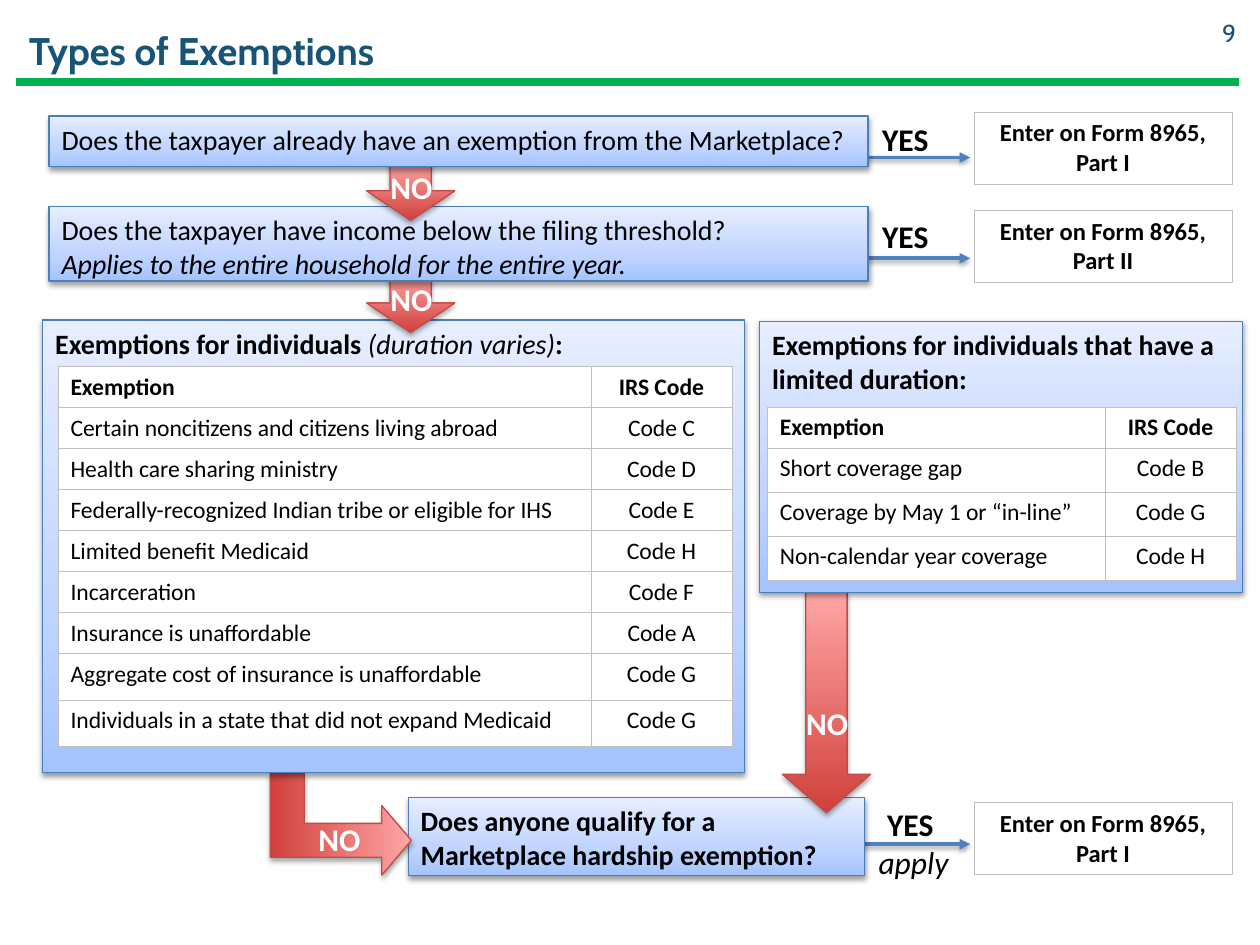
from lxml.etree import SubElement
from pptx import Presentation
from pptx.dml.color import RGBColor
from pptx.enum.shapes import MSO_CONNECTOR, MSO_SHAPE
from pptx.enum.text import MSO_ANCHOR, PP_ALIGN
from pptx.oxml import parse_xml
from pptx.oxml.ns import nsdecls, qn
from pptx.util import Inches, Pt

BLUE = [(0, "A4C4FF"), (35, "BFD4FF"), (100, "E6EEFF")], "4B7EBC"
RED = [(0, "D1403C"), (100, "FFA6A5")], "BF4C48"
NAVY = "175475"


def color(code):
    return RGBColor.from_string(code)


def place(*nums):
    return [Inches(n) for n in nums]


def shade(shape, alpha=None, dist=1.6):
    """Replace the theme shadow with a soft one, or with none."""
    inner = ""
    if alpha:
        inner = (f'<a:outerShdw blurRad="{Pt(3.1)}" dist="{Pt(dist)}" dir="5400000" '
                 f'rotWithShape="0"><a:srgbClr val="000000"><a:alpha val="{alpha * 1000}"/>'
                 '</a:srgbClr></a:outerShdw>')
    shape._element.spPr.append(
        parse_xml(f'<a:effectLst {nsdecls("a")}>{inner}</a:effectLst>'))


def blend(shape, stops):
    """Fill with a gradient that rises from the bottom edge."""
    marks = "".join(f'<a:gs pos="{pos * 1000}"><a:srgbClr val="{code}"/></a:gs>'
                    for pos, code in stops)
    grad = parse_xml(f'<a:gradFill {nsdecls("a")} rotWithShape="1"><a:gsLst>{marks}'
                     '</a:gsLst><a:lin ang="16200000" scaled="0"/></a:gradFill>')
    shape._element.spPr.find(qn("a:prstGeom")).addnext(grad)


class Deck:
    font = "Calibri"
    ink = "000000"

    def __init__(self, slide):
        self.slide = slide
        self.shapes = slide.shapes

    def style(self, run, size, bold=False, italic=False, ink=None, font=None):
        run.font.size = Pt(size)
        run.font.name = font or self.font
        run.font.bold = bold
        run.font.italic = italic
        run.font.color.rgb = color(ink or self.ink)

    def title(self, text, spot):
        box = self.shapes.title
        box.left, box.top, box.width, box.height = place(*spot)
        frame = box.text_frame
        frame.text = text
        frame.vertical_anchor = MSO_ANCHOR.MIDDLE
        frame.paragraphs[0].alignment = PP_ALIGN.LEFT
        self.style(frame.paragraphs[0].runs[0], 22, True, ink=NAVY, font="Cabin")

    def label(self, text, spot, align=PP_ALIGN.CENTER, size=18, **look):
        frame = self.shapes.add_textbox(*place(*spot)).text_frame
        frame.word_wrap = True
        frame.margin_left = frame.margin_right = 0
        frame.vertical_anchor = MSO_ANCHOR.MIDDLE
        frame.text = text
        frame.paragraphs[0].alignment = align
        self.style(frame.paragraphs[0].runs[0], size, **look)

    def line(self, start, end, code, width, arrow=True):
        link = self.shapes.add_connector(
            MSO_CONNECTOR.STRAIGHT, *place(*start), *place(*end))
        link.line.color.rgb = color(code)
        link.line.width = Pt(width)
        if arrow:
            SubElement(link.line._get_or_add_ln(), qn("a:tailEnd"), type="triangle")
        shade(link, 38 if arrow else None)

    def shape(self, kind, spot, look, alpha, dist):
        item = self.shapes.add_shape(kind, *place(*spot))
        stops, edge = look
        blend(item, stops)
        item.line.color.rgb = color(edge)
        item.line.width = Pt(0.75)
        shade(item, alpha, dist)
        return item

    def box(self, spot, *rows):
        """Each row is a list of (text, bold, italic) parts."""
        frame = self.shape(MSO_SHAPE.RECTANGLE, spot, BLUE, 38, 1.6).text_frame
        frame.word_wrap = True
        frame.vertical_anchor = MSO_ANCHOR.TOP
        for i, row in enumerate(rows):
            para = frame.add_paragraph() if i else frame.paragraphs[0]
            para.alignment = PP_ALIGN.LEFT
            for text, bold, italic in row:
                run = para.add_run()
                run.text = text
                self.style(run, 16, bold, italic)

    def arrow(self, kind, spot, adjust, note, turn=0):
        item = self.shape(kind, spot, RED, 35, 1.8)
        for i, value in enumerate(adjust):
            item.adjustments[i] = value
        item.rotation = turn
        self.label("NO", note, bold=True, ink="FFFFFF")

    def table(self, spot, widths, heights, rows, size=13.5):
        grid = self.shapes.add_table(len(rows), len(widths), *place(*spot)).table
        for col, width in zip(grid.columns, widths):
            col.width = Inches(width)
        for row, height in zip(grid.rows, heights):
            row.height = Inches(height)
        for r, row in enumerate(rows):
            for c, text in enumerate(row):
                self.cell(grid.cell(r, c), text, size, r == 0,
                          c == len(widths) - 1)

    def cell(self, cell, text, size, head, center):
        cell.text = text
        cell.vertical_anchor = MSO_ANCHOR.MIDDLE if head else MSO_ANCHOR.TOP
        para = cell.text_frame.paragraphs[0]
        para.alignment = PP_ALIGN.CENTER if center else PP_ALIGN.LEFT
        self.style(para.runs[0], size, head)
        props = cell._tc.get_or_add_tcPr()
        for side in ("lnL", "lnR", "lnT", "lnB"):
            edge = SubElement(props, qn(f"a:{side}"), w=str(Pt(0.5)))
            SubElement(SubElement(edge, qn("a:solidFill")), qn("a:srgbClr"), val="BFBFBF")
        cell.fill.solid()
        cell.fill.fore_color.rgb = color("FFFFFF")


def main():
    prs = Presentation()
    prs.slide_width, prs.slide_height = place(10, 7.5)
    deck = Deck(prs.slides.add_slide(prs.slide_layouts[5]))

    # Header
    deck.line((0.13, 0.65), (9.83, 0.65), "00B050", 4.75, arrow=False)
    deck.title("Types of Exemptions", (0.13, 0.11, 9, 0.57))
    deck.label("9", (9.4, 0.06, 0.41, 0.4), PP_ALIGN.RIGHT, 14, ink=NAVY, font="Cabin")

    # Arrows to the forms
    for y in (1.25, 2.05, 6.7):
        deck.line((6.5, y), (7.7, y), "4F81BD", 2)

    # Hardship question
    deck.box((3.24, 6.33, 3.62, 0.62),
             [("Does anyone qualify for a Marketplace hardship exemption?", True, False)])
    deck.arrow(MSO_SHAPE.BENT_UP_ARROW, (2.3, 5.98, 0.81, 1.12), (0.333, 0.34, 0.29),
               (2.41, 6.48, 0.57, 0.35), turn=90)

    # Questions and panels, each drawn over the arrow that leaves it
    down = MSO_SHAPE.DOWN_ARROW
    deck.box((0.34, 2.54, 5.57, 3.59),
             [("Exemptions for individuals ", True, False),
              ("(duration varies)", False, True), (":", True, False)])
    deck.arrow(down, (2.91, 2.17, 0.7, 0.47), (0.468, 0.5), (2.98, 2.2, 0.57, 0.35))
    deck.box((0.39, 1.64, 6.5, 0.59),
             [("Does the taxpayer have income below the filing threshold?", False, False)],
             [("Applies to the entire household for the entire year.", False, True)])
    deck.arrow(down, (2.91, 1.28, 0.7, 0.47), (0.468, 0.5), (2.98, 1.31, 0.57, 0.35))
    deck.box((0.39, 0.92, 6.5, 0.4),
             [("Does the taxpayer already have an exemption from the Marketplace?",
               False, False)])
    deck.arrow(down, (6.21, 4.7, 0.7, 1.75), (0.468, 0.435), (6.28, 5.47, 0.57, 0.53))
    deck.box((6.03, 2.55, 3.83, 2.15),
             [("Exemptions for individuals that have a limited duration:", True, False)])

    # Exemption tables
    head = ("Exemption", "IRS Code")
    deck.table((0.46, 2.91, 5.35, 3.01), (4.23, 1.12), [0.32] * 7 + [0.37] * 2, [
        head,
        ("Certain noncitizens and citizens living abroad", "Code C"),
        ("Health care sharing ministry", "Code D"),
        ("Federally-recognized Indian tribe or eligible for IHS", "Code E"),
        ("Limited benefit Medicaid", "Code H"),
        ("Incarceration", "Code F"),
        ("Insurance is unaffordable", "Code A"),
        ("Aggregate cost of insurance is unaffordable", "Code G"),
        ("Individuals in a state that did not expand Medicaid", "Code G")])
    deck.table((6.09, 3.23, 3.72, 1.38), (2.68, 1.04), [0.28] + [0.35] * 3, [
        head,
        ("Short coverage gap", "Code B"),
        ("Coverage by May 1 or “in-line”", "Code G"),
        ("Non-calendar year coverage", "Code H")])

    # Answers and forms
    for x, y, top, part in ((6.9, 0.93, 0.89, "I"), (6.9, 1.7, 1.67, "II"),
                            (6.94, 6.36, 6.37, "I")):
        deck.label("YES", (x, y, 0.57, 0.35), bold=True)
        deck.table((7.73, top, 2.05, 0.57), [2.05], [0.57],
                   [(f"Enter on Form 8965, Part {part}",)], size=14)
    deck.label("apply", (6.8, 6.66, 0.9, 0.36), italic=True)

    prs.save("out.pptx")


if __name__ == "__main__":
    main()
